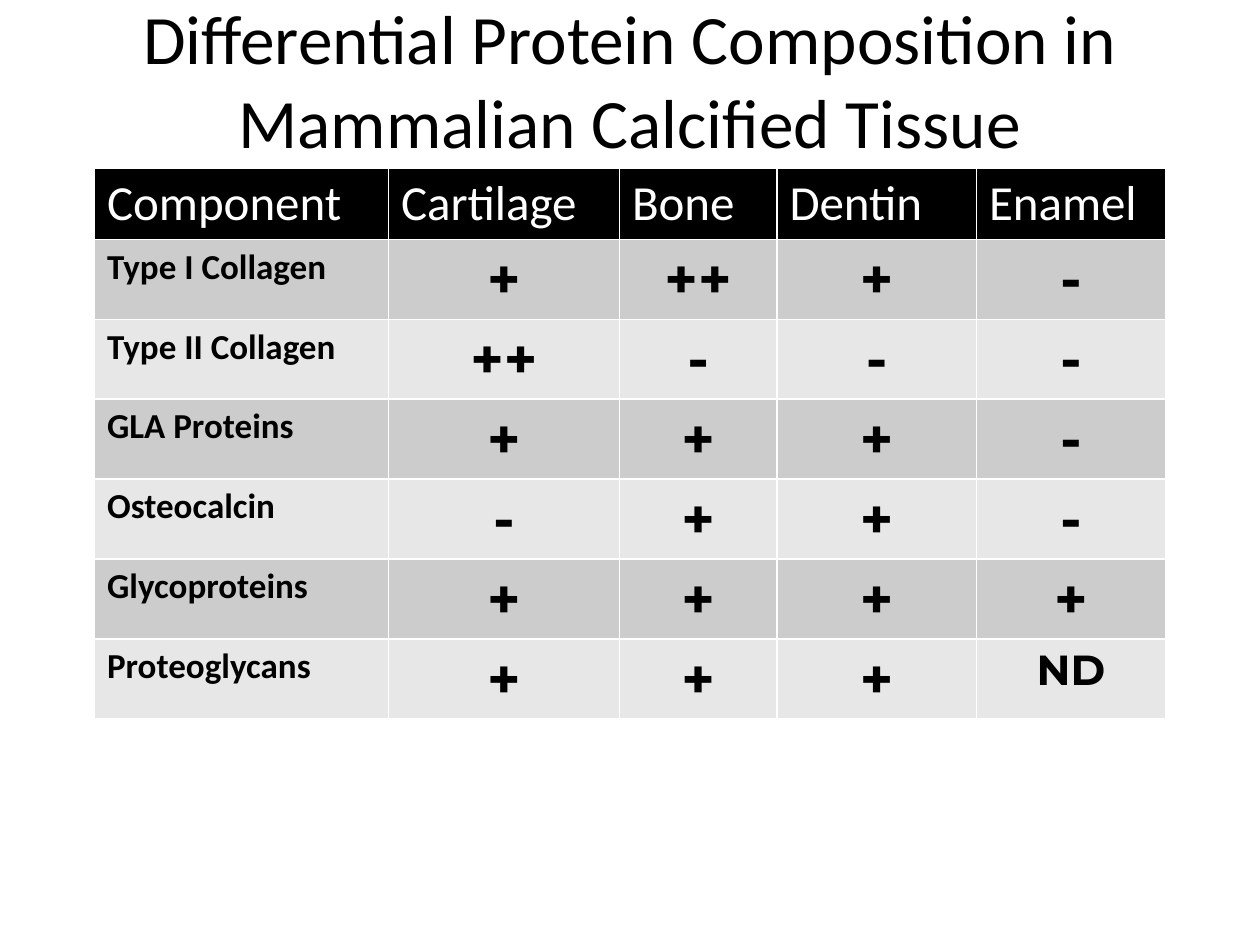
import pptx
import pptx.dml.color
import pptx.enum.text
import pptx.util

Pt = pptx.util.Pt
RGBColor = pptx.dml.color.RGBColor
PP_ALIGN = pptx.enum.text.PP_ALIGN

BLACK = RGBColor(0x00, 0x00, 0x00)
WHITE = RGBColor(0xFF, 0xFF, 0xFF)
DARK_BAND = RGBColor(0xCC, 0xCC, 0xCC)
LIGHT_BAND = RGBColor(0xE7, 0xE7, 0xE7)

TITLE = "Differential Protein Composition in Mammalian Calcified Tissue"
TISSUES = ["Component", "Cartilage", "Bone", "Dentin", "Enamel"]
PROTEINS = [
    ["Type I Collagen", "+", "++", "+", "-"],
    ["Type II Collagen", "++", "-", "-", "-"],
    ["GLA Proteins", "+", "+", "+", "-"],
    ["Osteocalcin", "-", "+", "+", "-"],
    ["Glycoproteins", "+", "+", "+", "+"],
    ["Proteoglycans", "+", "+", "+", "ND"],
]
COLUMN_SHARES = [28, 22, 15, 19, 18]
ROW_HEIGHT = 29.2


def write(frame, text, size, color, font="Calibri", bold=False, align=PP_ALIGN.LEFT):
    """Put one formatted paragraph in a text frame."""
    frame.text = text
    paragraph = frame.paragraphs[0]
    paragraph.alignment = align
    for run in paragraph.runs:
        run.font.name = font
        run.font.size = Pt(size)
        run.font.bold = bold
        run.font.color.rgb = color


def add_title(slide, left, top, width, height):
    """Add the centred heading in the given box."""
    heading = slide.shapes.add_textbox(Pt(left), Pt(top), Pt(width), Pt(height)).text_frame
    heading.word_wrap = True
    heading.vertical_anchor = pptx.enum.text.MSO_ANCHOR.MIDDLE
    write(heading, TITLE, 39.6, BLACK, align=PP_ALIGN.CENTER)


def fill_cell(cell, text, row, column):
    """Colour and write one cell according to its role in the table."""
    cell.fill.solid()
    if row == 0:
        cell.fill.fore_color.rgb = BLACK
        write(cell.text_frame, text, 28, WHITE)
        return
    cell.fill.fore_color.rgb = DARK_BAND if row % 2 else LIGHT_BAND
    if column == 0:
        write(cell.text_frame, text, 20, BLACK, bold=True)
    else:
        size = 24 if text == "ND" else 32
        write(cell.text_frame, text, size, BLACK, "Montserrat", True, PP_ALIGN.CENTER)


def add_composition_table(slide, left, top, width, height):
    """Add the protein by tissue table in the given box."""
    records = [TISSUES] + PROTEINS
    holder = slide.shapes.add_table(
        len(records), len(TISSUES), Pt(left), Pt(top), Pt(width), Pt(height))
    composition = holder.table
    for column, share in zip(composition.columns, COLUMN_SHARES):
        column.width = Pt(width * share / sum(COLUMN_SHARES))
    for row, record in enumerate(records):
        composition.rows[row].height = Pt(ROW_HEIGHT)
        for column, text in enumerate(record):
            fill_cell(composition.cell(row, column), text, row, column)
    holder.height = Pt(height)


def main():
    """Build the slide and save it."""
    deck = pptx.Presentation()
    deck.slide_width, deck.slide_height = Pt(720), Pt(540)
    slide = deck.slides.add_slide(deck.slide_layouts[6])
    add_title(slide, 54, 0, 612, 90)
    add_composition_table(slide, 54, 96, 612, 314.6)
    deck.save("out.pptx")


if __name__ == "__main__":
    main()
